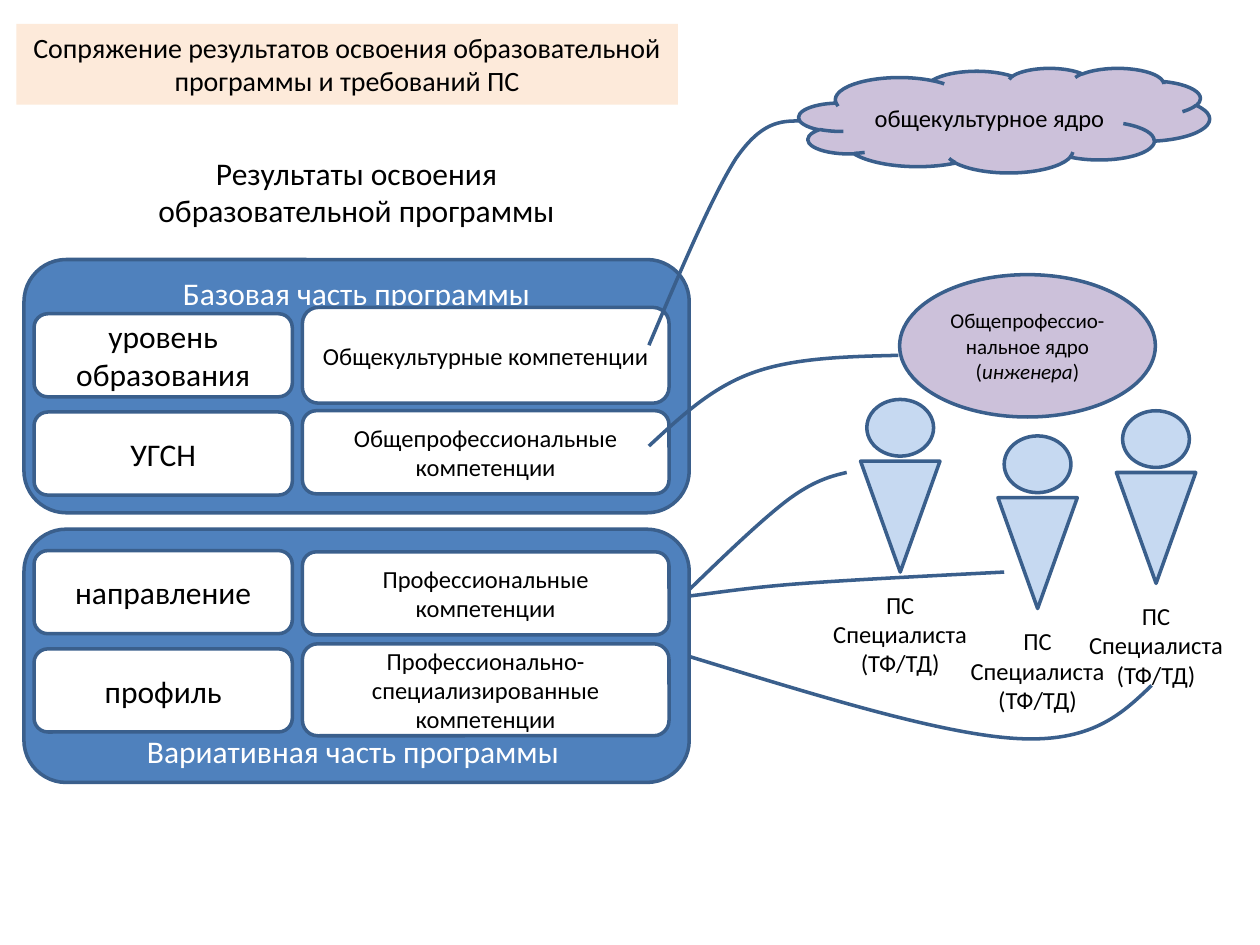
from lxml import etree
from pptx import Presentation
from pptx.dml.color import RGBColor
from pptx.enum.shapes import MSO_SHAPE
from pptx.enum.text import MSO_ANCHOR, MSO_AUTO_SIZE, PP_ALIGN
from pptx.oxml.ns import qn
from pptx.util import Inches, Pt

ROUND = MSO_SHAPE.ROUNDED_RECTANGLE
OVAL = MSO_SHAPE.OVAL
CLOUD = MSO_SHAPE.CLOUD
CONE = MSO_SHAPE.FLOWCHART_EXTRACT
TOP, MIDDLE, BOTTOM = MSO_ANCHOR.TOP, MSO_ANCHOR.MIDDLE, MSO_ANCHOR.BOTTOM
CENTER = PP_ALIGN.CENTER
GROW = MSO_AUTO_SIZE.SHAPE_TO_FIT_TEXT

BLUE = RGBColor(0x4F, 0x81, 0xBD)
EDGE = RGBColor(0x3A, 0x5F, 0x8C)
LILAC = RGBColor(0xCC, 0xC1, 0xDA)
SKY = RGBColor(0xC6, 0xD9, 0xF1)
PEACH = RGBColor(0xFD, 0xEA, 0xDA)
WHITE = RGBColor(0xFF, 0xFF, 0xFF)
BLACK = RGBColor(0, 0, 0)


def put(shapes, kind, box, fill=None, paras=(), size=14, color=BLACK, wrap=True):
    """Add a preset shape, or a text box if kind is None; a tuple in paras is (text, italic) runs."""
    place = [Inches(v) for v in box]
    if kind is None:
        shape = shapes.add_textbox(*place)
    else:
        shape = shapes.add_shape(kind, *place)
        shape.shadow.inherit = False
        shape.line.color.rgb = EDGE
        shape.line.width = Pt(2)
    if fill is not None:
        shape.fill.solid()
        shape.fill.fore_color.rgb = fill
    frame = shape.text_frame
    frame.word_wrap = wrap
    if kind is None:
        frame.auto_size = GROW
    else:
        frame.vertical_anchor = MIDDLE
    for i, para in enumerate(paras):
        line = frame.paragraphs[0] if i == 0 else frame.add_paragraph()
        line.alignment = CENTER
        for text, slant in ([(para, False)] if isinstance(para, str) else para):
            run = line.add_run()
            run.text = text
            run.font.name = "Calibri"
            run.font.size = Pt(size)
            run.font.italic = slant
            run.font.color.rgb = color
    return shape


def curve(shapes, start, *points):
    """Draw an open curve; each three points are two controls and an end."""
    pen = shapes.build_freeform(Inches(start[0]), Inches(start[1]))
    pen.add_line_segments([(Inches(x), Inches(y)) for x, y in points], close=False)
    shape = pen.convert_to_shape()
    shape.shadow.inherit = False
    shape.fill.background()
    shape.line.color.rgb = EDGE
    shape.line.width = Pt(2)
    track = next(shape._element.iter(qn("a:path")))
    steps = track.findall(qn("a:lnTo"))
    for i in range(0, len(steps), 3):
        bend = etree.SubElement(track, qn("a:cubicBezTo"))
        for step in steps[i:i + 3]:
            bend.append(step[0])
            track.remove(step)


deck = Presentation()
deck.slide_width, deck.slide_height = Inches(10), Inches(7.5)
slide = deck.slides.add_slide(deck.slide_layouts[6])
shapes = slide.shapes

# Programme parts
base = put(shapes, ROUND, (0.19, 2.06, 5.28, 2.01), BLUE,
           ["Базовая часть программы"], 18, WHITE)
base.text_frame.vertical_anchor = TOP
base.text_frame.margin_top = Inches(0.02)
extra = put(shapes, ROUND, (0.19, 4.2, 5.28, 2.01), BLUE,
            ["Вариативная часть программы "], 18, WHITE)
extra.text_frame.vertical_anchor = BOTTOM
extra.text_frame.margin_bottom = 0

# Levels on the left, competences on the right
levels = [(2.49, "уровень образования"), (3.27, "УГСН"),
          (4.37, "направление"), (5.15, "профиль")]
skills = [(2.44, 0.76, "Общекультурные компетенции"),
          (3.26, 0.66, "Общепрофессиональные компетенции"),
          (4.38, 0.66, "Профессиональные компетенции"),
          (5.11, 0.73, "Профессионально-специализированные компетенции")]
for y, text in levels:
    put(shapes, ROUND, (0.27, y, 2.05, 0.66), WHITE, [text], 18)
for y, high, text in skills:
    put(shapes, ROUND, (2.4, y, 2.91, high), WHITE, [text])

put(shapes, None, (1.11, 1.17, 3.44, 0.71), None,
    ["Результаты освоения", "образовательной программы"], 18, wrap=False)

# Links from competences to cores and specialists
curve(shapes, (5.15, 2.74), (5.4, 2.15), (5.65, 1.56), (5.84, 1.26),
      (6.04, 0.97), (6.19, 0.96), (6.34, 0.96))
put(shapes, CLOUD, (6.34, 0.54, 3.26, 0.83), LILAC, ["общекультурное ядро"])
curve(shapes, (5.15, 3.54), (5.4, 3.31), (5.64, 3.08), (5.97, 2.96),
      (6.3, 2.84), (6.71, 2.83), (7.13, 2.82))
curve(shapes, (5.47, 4.73), (5.72, 4.7), (5.96, 4.66), (6.38, 4.63),
      (6.79, 4.6), (7.38, 4.57), (7.97, 4.54))
curve(shapes, (5.47, 4.68), (5.76, 4.4), (6.04, 4.13), (6.25, 3.97),
      (6.45, 3.82), (6.59, 3.78), (6.72, 3.75))

# Specialists
short = ["ПС", "Специалиста (ТФ/ТД)"]
split = ["ПС", "Специалиста", "(ТФ/ТД)"]
for x, y, label in [(6.83, 3.66, short), (7.92, 3.95, split), (8.86, 3.75, split)]:
    person = shapes.add_group_shape().shapes
    body = put(person, CONE, (x, y, 0.63, 0.88), SKY)
    body.rotation = 180
    put(person, OVAL, (x + 0.05, y - 0.49, 0.53, 0.45), SKY)
    put(person, None, (x - 0.32, y + 0.97, 1.27, 0.81), None, label)

put(shapes, OVAL, (7.14, 2.18, 2.03, 1.13), LILAC,
    [(("Общепрофессио-нальное ядро (", False), ("инженера", True), (")", False))], 12)
put(shapes, None, (0.13, 0.19, 5.25, 0.64), PEACH,
    ["Сопряжение результатов освоения образовательной",
     "программы и требований ПС"], 16, wrap=False)
curve(shapes, (5.47, 5.21), (6.45, 5.51), (7.44, 5.82), (8.05, 5.86),
      (8.66, 5.9), (8.9, 5.67), (9.14, 5.44))

deck.save("out.pptx")
